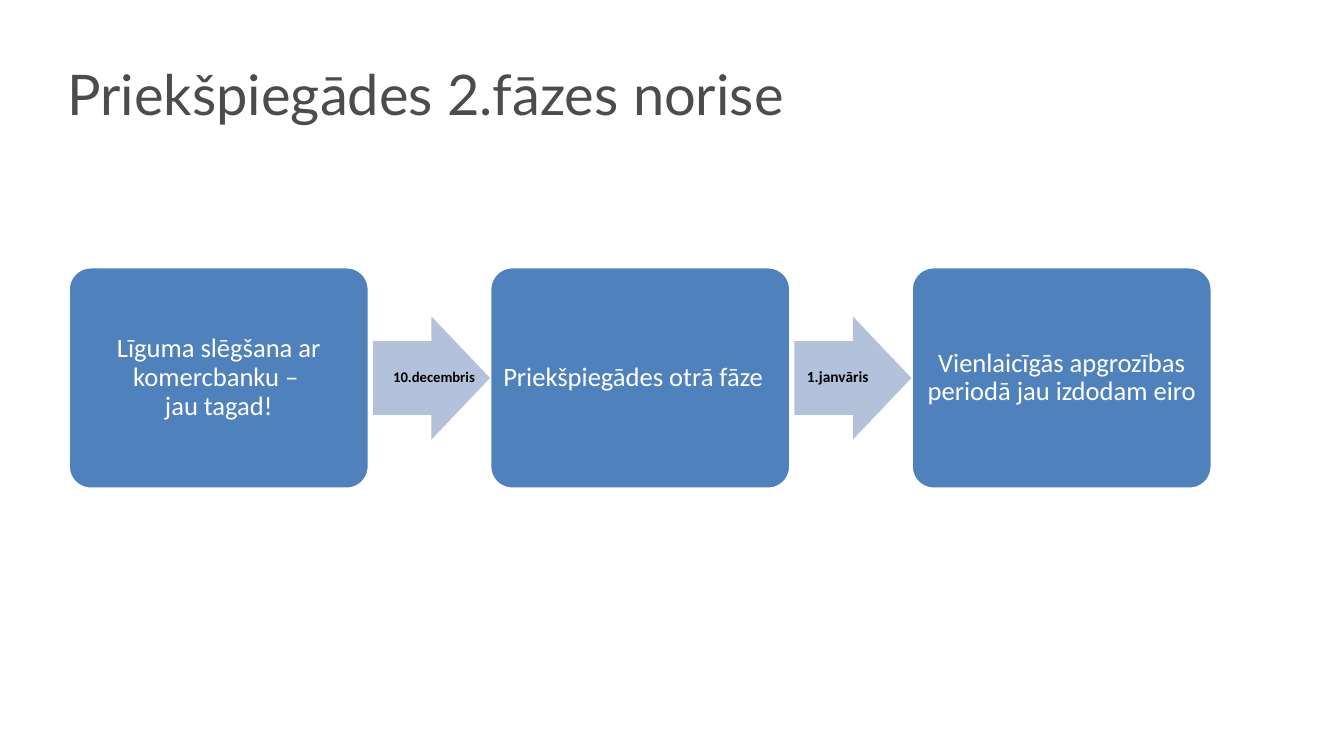
from dataclasses import dataclass

from pptx import Presentation
from pptx.dml.color import RGBColor
from pptx.enum.shapes import MSO_SHAPE
from pptx.enum.text import MSO_ANCHOR, MSO_AUTO_SIZE, PP_ALIGN
from pptx.util import Pt

ROUNDED = MSO_SHAPE.ROUNDED_RECTANGLE
ARROW = MSO_SHAPE.RIGHT_ARROW
MIDDLE = MSO_ANCHOR.MIDDLE
GROW = MSO_AUTO_SIZE.SHAPE_TO_FIT_TEXT
LEFT, CENTER = PP_ALIGN.LEFT, PP_ALIGN.CENTER
PX = 9144
TITLE_ONLY = 5


@dataclass(frozen=True)
class Theme:
    heading_font: str = "Lato"
    body_font: str = "Calibri"
    heading: str = "4C4C4C"
    step: str = "4F81BD"
    arrow: str = "B3C1DB"
    white: str = "FFFFFF"
    date: str = "000000"
    heading_size: float = 40
    step_size: float = 19


class ProcessSlide:
    def __init__(self, deck, theme):
        self.theme = theme
        self.slide = deck.slides.add_slide(deck.slide_layouts[TITLE_ONLY])

    def set_text(self, frame, lines, font, size, color, align=CENTER,
                 spacing=0.9, bold=False, insets=(0, 0, 0, 0)):
        frame.word_wrap = True
        frame.vertical_anchor = MIDDLE
        (frame.margin_left, frame.margin_top,
         frame.margin_right, frame.margin_bottom) = [i * PX for i in insets]
        paragraph = frame.paragraphs[0]
        paragraph.alignment = align
        paragraph.line_spacing = spacing
        for number, line in enumerate(lines):
            if number:
                paragraph.add_line_break()
            run = paragraph.add_run()
            run.text = line
            run.font.name = font
            run.font.size = Pt(size)
            run.font.bold = bold
            run.font.color.rgb = RGBColor.from_string(color)

    def title(self, text, *box):
        heading = self.slide.shapes.title
        heading.left, heading.top, heading.width, heading.height = [
            v * PX for v in box]
        theme = self.theme
        self.set_text(heading.text_frame, [text], theme.heading_font,
                      theme.heading_size, theme.heading, LEFT, 1.02)
        heading.text_frame.auto_size = GROW

    def shape(self, kind, fill, adjustments, *box):
        shape = self.slide.shapes.add_shape(kind, *[v * PX for v in box])
        shape.shadow.inherit = False
        shape.fill.solid()
        shape.fill.fore_color.rgb = RGBColor.from_string(fill)
        for index, value in enumerate(adjustments):
            shape.adjustments[index] = value
        return shape

    def step(self, lines, shift, *box):
        theme = self.theme
        step = self.shape(ROUNDED, theme.step, [0.1], *box)
        step.line.color.rgb = RGBColor.from_string(theme.white)
        step.line.width = Pt(2)
        self.set_text(step.text_frame, lines, theme.body_font, theme.step_size,
                      theme.white, insets=(8 - shift, 8, 8 + shift, 8))

    def arrow(self, *box):
        arrow = self.shape(ARROW, self.theme.arrow, [0.6, 0.5], *box)
        arrow.line.fill.background()

    def date(self, text, size, *box):
        date = self.slide.shapes.add_textbox(*[v * PX for v in box])
        self.set_text(date.text_frame, [text], self.theme.body_font, size,
                      self.theme.date, bold=True)


def main():
    deck = Presentation()
    deck.slide_width = 1333 * PX
    deck.slide_height = 750 * PX
    page = ProcessSlide(deck, Theme())
    page.title("Priekšpiegādes 2.fāzes norise", 67, 60, 1200, 64)

    steps = [
        (["Līguma slēgšana ar komercbanku – ", "jau tagad!"], 0),
        (["Priekšpiegādes otrā fāze"], 7),
        (["Vienlaicīgās apgrozības periodā jau izdodam eiro"], 0),
    ]
    dates = [("10.decembris", 10.5, 121), ("1.janvāris", 11, 86)]
    pitch = 418

    for index, (lines, shift) in enumerate(steps):
        page.step(lines, shift, 68 + index * pitch, 265, 298, 220)
    for index, (text, size, width) in enumerate(dates):
        left = 370 + index * pitch
        page.arrow(left, 314, 116, 122)
        page.date(text, size, left, 338, width, 73)

    deck.save("out.pptx")


if __name__ == "__main__":
    main()
